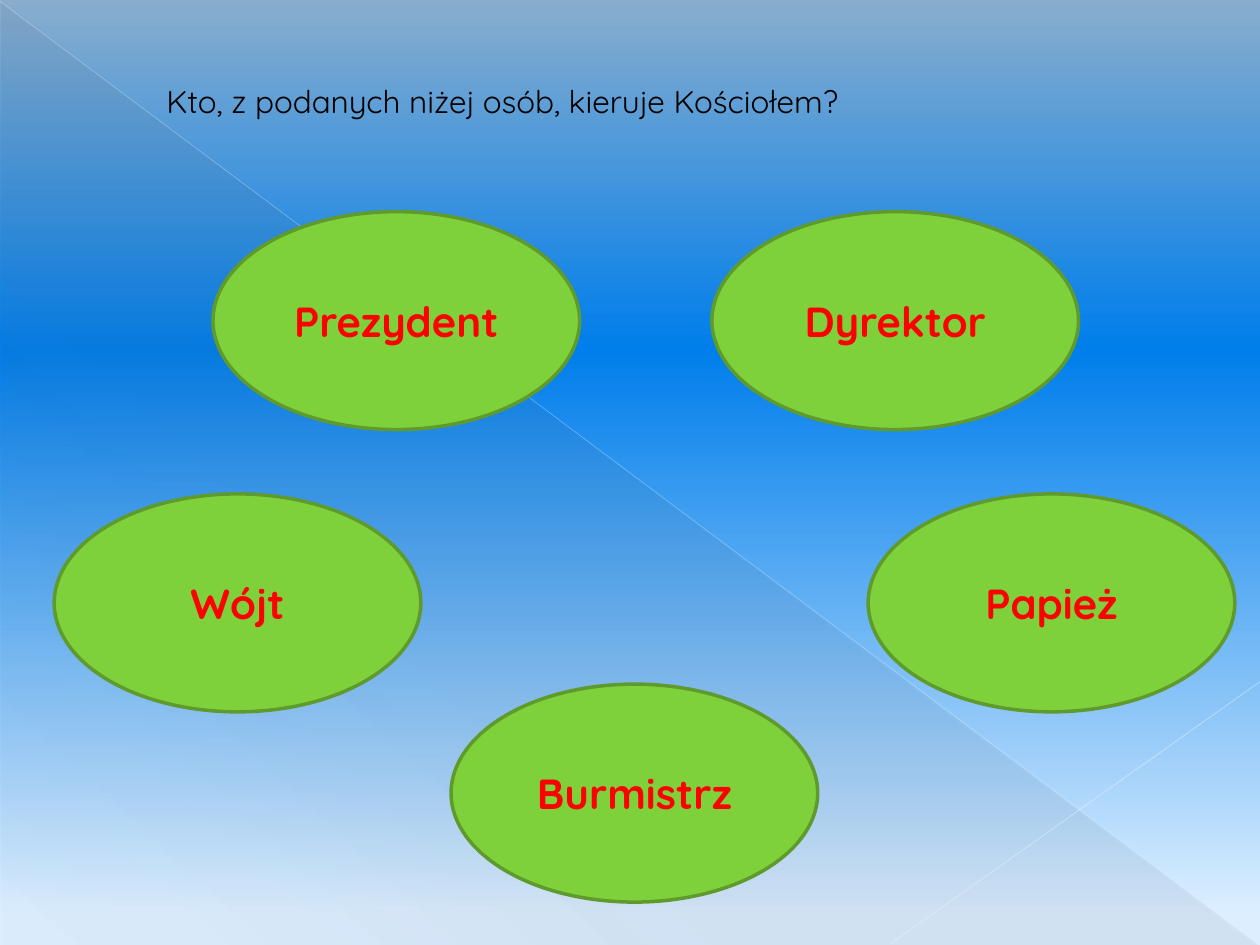
from lxml import etree
from pptx import Presentation
from pptx.dml.color import RGBColor
from pptx.enum.shapes import MSO_CONNECTOR, MSO_SHAPE
from pptx.enum.text import MSO_ANCHOR, MSO_AUTO_SIZE, PP_ALIGN
from pptx.oxml.ns import qn
from pptx.util import Inches, Pt

STRAIGHT = MSO_CONNECTOR.STRAIGHT
ELLIPSE = MSO_SHAPE.OVAL
TRIANGLE = MSO_SHAPE.RIGHT_TRIANGLE
CENTER, LEFT = PP_ALIGN.CENTER, PP_ALIGN.LEFT
MIDDLE, TOP = MSO_ANCHOR.MIDDLE, MSO_ANCHOR.TOP
GROW = MSO_AUTO_SIZE.SHAPE_TO_FIT_TEXT

FONT = "Quicksand"
WIDTH, HEIGHT = 10, 7.5
OVAL_WIDTH, OVAL_HEIGHT = 2.91, 1.73
UPPER, MIDDLE_ROW, LOWER = 1.68, 3.92, 5.43
ANSWERS = [
    ("Prezydent", 1.69, UPPER),
    ("Wójt", 0.43, MIDDLE_ROW),
    ("Burmistrz", 3.58, LOWER),
    ("Papież", 6.89, MIDDLE_ROW),
    ("Dyrektor", 5.65, UPPER),
]


def color(value):
    """Turn a hex string into a colour."""
    return RGBColor.from_string(value)


def add_alpha(color_element, percent):
    """Set the opacity of a colour element."""
    etree.SubElement(color_element, qn("a:alpha"), val=str(percent * 1000))


def set_gradient(fill, element, stops, angle):
    """Give a fill its gradient of (position, colour, opacity) stops."""
    fill.gradient()
    gradient = element.find(".//" + qn("a:gradFill"))
    for child in list(gradient):
        gradient.remove(child)
    stop_list = etree.SubElement(gradient, qn("a:gsLst"))
    for position, value, opacity in stops:
        stop = etree.SubElement(stop_list, qn("a:gs"), pos=str(position * 1000))
        add_alpha(etree.SubElement(stop, qn("a:srgbClr"), val=value), opacity)
    etree.SubElement(gradient, qn("a:lin"), ang=str(angle * 60000), scaled="0")


def add_shade(page):
    """Add the faint triangle below the diagonal."""
    shade = page.shapes.add_shape(
        TRIANGLE, Inches(0.01), Inches(0.02), Inches(9.98), Inches(7.48))
    shade.shadow.inherit = False
    shade.line.fill.background()
    stops = [(0, "4E5B6F", 10), (70, "4E5B6F", 8), (100, "4E5B6F", 1)]
    set_gradient(shade.fill, shade.element, stops, 133)


def add_ray(page, start, end, value, width, opacity):
    """Add a thin translucent line."""
    ray = page.shapes.add_connector(STRAIGHT, *map(Inches, start + end))
    ray.line.color.rgb = color(value)
    ray.line.width = Pt(width)
    add_alpha(ray.element.find(".//" + qn("a:srgbClr")), opacity)
    etree.SubElement(ray.element.spPr, qn("a:effectLst"))


def write(shape, text, size, value, bold, align, anchor):
    """Put one formatted line of text in a shape."""
    frame = shape.text_frame
    frame.text = text
    frame.vertical_anchor = anchor
    para = frame.paragraphs[0]
    para.alignment = align
    font = para.runs[0].font
    font.name, font.size, font.bold = FONT, Pt(size), bold
    font.color.rgb = color(value)


def add_question(page, text):
    """Place the question in the title placeholder."""
    title = page.shapes.title
    title.left, title.top = Inches(1.22), Inches(0.6)
    title.width, title.height = Inches(5.89), Inches(0.4)
    write(title, text, 18, "000000", False, LEFT, TOP)
    title.text_frame.word_wrap = False
    title.text_frame.auto_size = GROW


def add_answer(page, text, left, top):
    """Add a green ellipse holding one answer."""
    oval = page.shapes.add_shape(
        ELLIPSE, Inches(left), Inches(top), Inches(OVAL_WIDTH), Inches(OVAL_HEIGHT))
    oval.shadow.inherit = False
    oval.fill.solid()
    oval.fill.fore_color.rgb = color("7FD13B")
    oval.line.color.rgb = color("5E9B2C")
    oval.line.width = Pt(2)
    write(oval, text, 24, "FF0000", True, CENTER, MIDDLE)


def main():
    """Build the quiz slide."""
    deck = Presentation()
    deck.slide_width, deck.slide_height = Inches(WIDTH), Inches(HEIGHT)
    page = deck.slides.add_slide(deck.slide_layouts.get_by_name("Title Only"))
    sky = [(0, "88ADCD", 100), (37, "007EEB", 100), (97, "DDEFFF", 100)]
    set_gradient(page.background.fill, page.element, sky, 90)
    add_shade(page)
    add_ray(page, (0, 0.01), (9.99, 7.49), "EAF5FF", 0.39, 35)
    add_ray(page, (10, 5.41), (7.07, 7.49), "ECF6FF", 0.47, 45)
    add_question(page, "Kto, z podanych niżej osób, kieruje Kościołem?")
    for text, left, top in ANSWERS:
        add_answer(page, text, left, top)
    deck.save("out.pptx")


if __name__ == "__main__":
    main()
